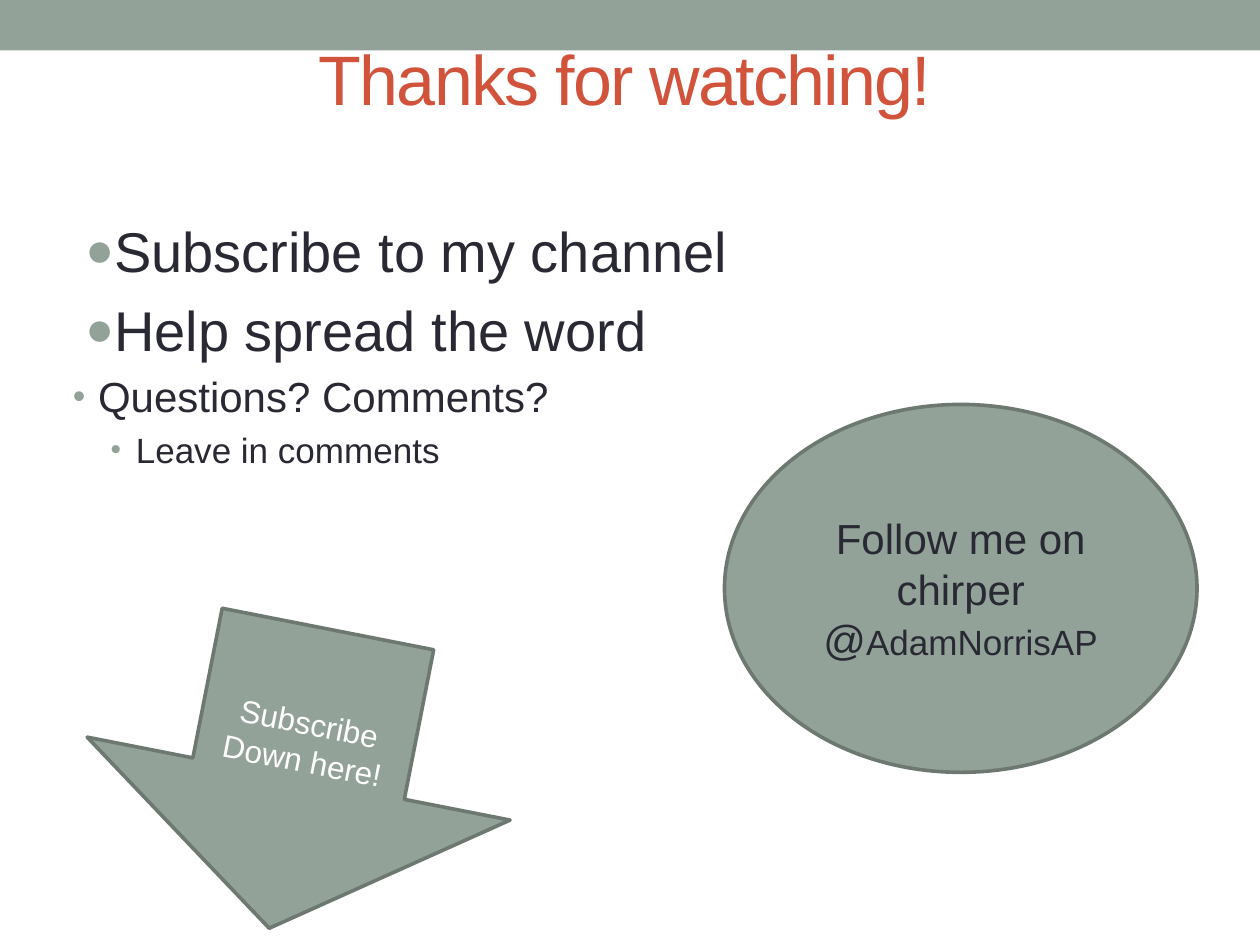
from dataclasses import dataclass

from lxml import etree
from pptx import Presentation
from pptx import util as u
from pptx.dml.color import RGBColor
from pptx.enum import shapes, text
from pptx.oxml import ns


@dataclass(frozen=True)
class Theme:
    font: str = "Arial"
    sage: str = "93A299"
    outline: str = "6D7871"
    accent: str = "D2533C"
    dark: str = "292934"
    white: str = "FFFFFF"
    title: int = 40
    large: int = 32
    medium: int = 24
    small: int = 20
    label: int = 18
    outline_width: float = 2.08


class SlideBuilder:
    def __init__(self, slide, theme):
        self.slide = slide
        self.theme = theme

    def add_run(self, paragraph, words, size, color, spacing=None):
        run = paragraph.add_run()
        run.text = words
        run.font.name = self.theme.font
        run.font.size = u.Pt(size)
        run.font.color.rgb = RGBColor.from_string(color)
        if spacing is not None:
            run._r.get_or_add_rPr().set("spc", str(round(spacing * 100)))

    def add_shape(self, kind, box, outlined=True, rotation=0):
        shape = self.slide.shapes.add_shape(kind, *map(u.Inches, box))
        shape.shadow.inherit = False
        shape.rotation = rotation
        shape.fill.solid()
        shape.fill.fore_color.rgb = RGBColor.from_string(self.theme.sage)
        if outlined:
            shape.line.color.rgb = RGBColor.from_string(self.theme.outline)
            shape.line.width = u.Pt(self.theme.outline_width)
        else:
            shape.line.fill.background()
        return shape

    def add_text_box(self, box):
        shape = self.slide.shapes.add_textbox(*map(u.Inches, box))
        shape.text_frame.word_wrap = True
        return shape

    def add_centered(self, shape, lines, color, spacing=None):
        """Each line is a list of (words, size) runs."""
        frame = shape.text_frame
        frame.word_wrap = True
        frame.vertical_anchor = text.MSO_ANCHOR.MIDDLE
        for index, runs in enumerate(lines):
            paragraph = frame.add_paragraph() if index else frame.paragraphs[0]
            paragraph.alignment = text.PP_ALIGN.CENTER
            for words, size in runs:
                self.add_run(paragraph, words, size, color, spacing)

    def add_bullets(self, shape, items):
        """Each item is (words, size, level, left margin, bullet character)."""
        frame = shape.text_frame
        for index, (words, size, level, margin, mark) in enumerate(items):
            paragraph = frame.add_paragraph() if index else frame.paragraphs[0]
            paragraph.level = level
            paragraph.space_before = u.Pt(size * 0.2)
            self.add_run(paragraph, words, size, self.theme.dark)
            self.set_bullet(paragraph, margin, mark)

    def set_bullet(self, paragraph, margin, mark):
        properties = paragraph._p.get_or_add_pPr()
        properties.set("marL", str(u.Inches(margin)))
        properties.set("indent", str(u.Inches(-0.2)))
        color = etree.SubElement(properties, ns.qn("a:buClr"))
        etree.SubElement(color, ns.qn("a:srgbClr"), val=self.theme.sage)
        etree.SubElement(properties, ns.qn("a:buSzPct"), val="85000")
        etree.SubElement(properties, ns.qn("a:buFont"), typeface=self.theme.font)
        etree.SubElement(properties, ns.qn("a:buChar"), char=mark)


def main():
    presentation = Presentation()
    presentation.slide_width = u.Inches(10)
    presentation.slide_height = u.Inches(7.5)
    theme = Theme()
    slide = presentation.slides.add_slide(presentation.slide_layouts[6])
    builder = SlideBuilder(slide, theme)
    kinds = shapes.MSO_SHAPE

    # Top band
    builder.add_shape(kinds.RECTANGLE, (0, 0, 10, 0.4), outlined=False)

    # Title
    title = builder.add_text_box((0.46, 0.03, 9, 1.17))
    builder.add_centered(
        title, [[("Thanks for watching!", theme.title)]], theme.accent, spacing=-1
    )

    # Bullet list
    body = builder.add_text_box((0.48, 1.67, 9, 5.21))
    builder.add_bullets(body, [
        ("Subscribe to my channel", theme.large, 1, 0.3, "●"),
        ("Help spread the word", theme.large, 1, 0.3, "●"),
        ("Questions? Comments?", theme.medium, 0, 0.2, "•"),
        ("Leave in comments", theme.small, 1, 0.5, "•"),
    ])

    # Subscribe arrow
    arrow = builder.add_shape(
        kinds.DOWN_ARROW, (0.66, 4.97, 3.42, 2.42), rotation=11.1
    )
    builder.add_centered(
        arrow,
        [[("Subscribe", theme.label)], [("Down here!", theme.label)]],
        theme.white,
    )

    # Follow bubble
    bubble = builder.add_shape(kinds.OVAL, (5.75, 3.21, 3.75, 2.92))
    builder.add_centered(
        bubble,
        [[("Follow me on chirper @", theme.medium), ("AdamNorrisAP", theme.small)]],
        theme.dark,
    )

    presentation.save("out.pptx")


if __name__ == "__main__":
    main()
